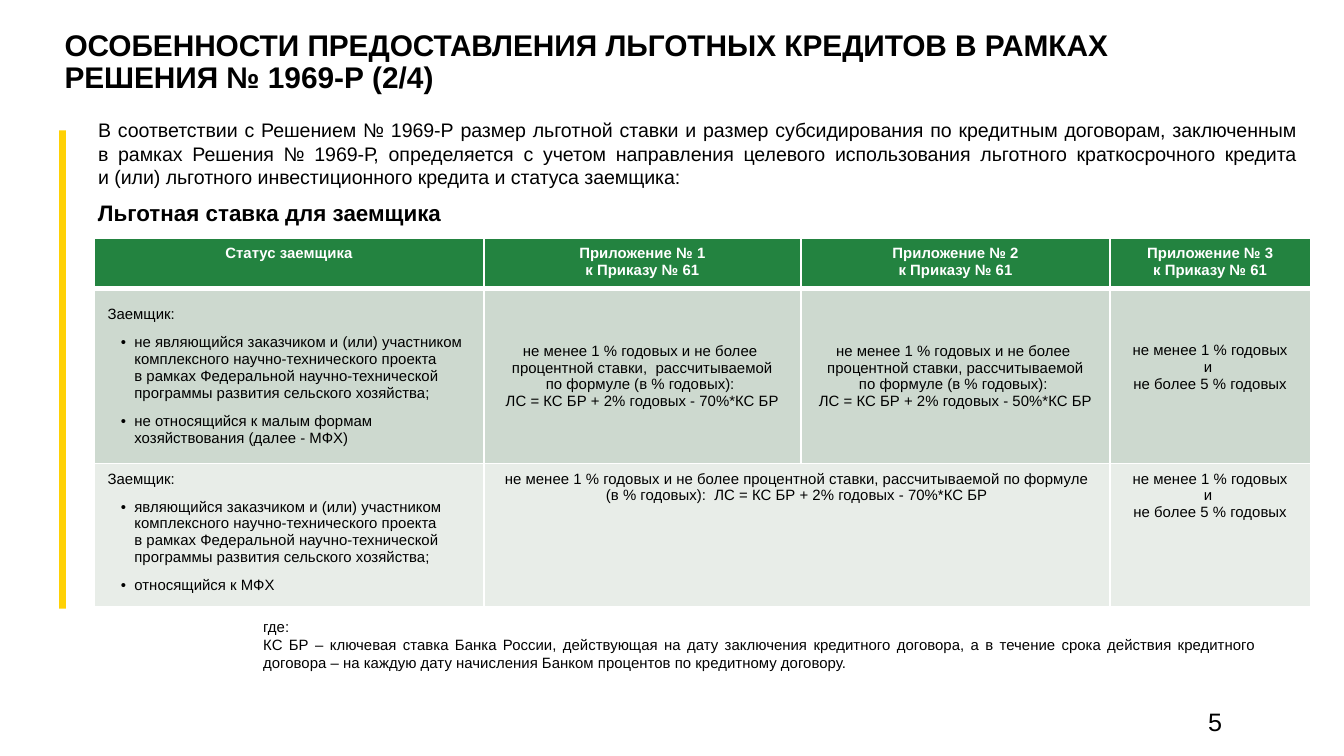
from copy import deepcopy
from dataclasses import dataclass

from lxml.etree import SubElement
from pptx import Presentation
from pptx.dml.color import RGBColor
from pptx.enum.shapes import MSO_SHAPE
from pptx.enum.text import MSO_ANCHOR, MSO_AUTO_SIZE, PP_ALIGN
from pptx.oxml import parse_xml
from pptx.oxml.ns import nsdecls, qn
from pptx.util import Inches, Pt


@dataclass(frozen=True)
class Theme:
    font: str = "Arial"
    black: str = "000000"
    white: str = "FFFFFF"
    gold: str = "FFD105"
    green: str = "238340"
    sage: str = "CDD9CF"
    mist: str = "E8EDE8"
    title: float = 16
    number: float = 13.5
    head: float = 12
    body: float = 10.5
    small: float = 8


theme = Theme()


def write(frame, lines, size=theme.small, color=theme.black, bold=False,
          align=PP_ALIGN.LEFT, anchor=MSO_ANCHOR.TOP, after=0, spacing=1.0):
    frame.word_wrap = True
    frame.vertical_anchor = anchor
    for i, line in enumerate(lines):
        para = frame.paragraphs[0] if i == 0 else frame.add_paragraph()
        para.text = line.removeprefix("• ")
        para.alignment = align
        para.line_spacing = spacing
        para.space_before = Pt(0)
        para.space_after = Pt(after if i < len(lines) - 1 else 0)
        props = para._p.get_or_add_pPr()
        if line.startswith("• "):
            props.set("marL", str(Inches(0.2)))
            props.set("indent", str(Inches(-0.1)))
            SubElement(props, qn("a:buFont")).set("typeface", theme.font)
            SubElement(props, qn("a:buChar")).set("char", "•")
        else:
            props.set("marL", "0")
            props.set("indent", "0")
            SubElement(props, qn("a:buNone"))
        for run in para.runs:
            run.font.name = theme.font
            run.font.size = Pt(size)
            run.font.bold = bold
            run.font.color.rgb = RGBColor.from_string(color)
        for gap in para._p.findall(qn("a:br")):
            gap.append(deepcopy(para.runs[0]._r.rPr))


def place(shape, left, top, width, height):
    shape.left, shape.top = Inches(left), Inches(top)
    shape.width, shape.height = Inches(width), Inches(height)
    return shape


deck = Presentation()
deck.slide_width = Inches(10)
deck.slide_height = Inches(10) * 9 // 16
slide = deck.slides.add_slide(deck.slide_layouts[1])
shapes = slide.shapes

bar = shapes.add_shape(MSO_SHAPE.RECTANGLE, Inches(0.44), Inches(0.97), Inches(0.05), Inches(3.56))
bar.shadow.inherit = False
bar.fill.solid()
bar.fill.fore_color.rgb = RGBColor.from_string(theme.gold)
bar.line.fill.background()

title = place(shapes.title, 0.38, 0.35, 9.31, 0.41).text_frame
title.auto_size = MSO_AUTO_SIZE.NONE
write(title, ["ОСОБЕННОСТИ ПРЕДОСТАВЛЕНИЯ ЛЬГОТНЫХ КРЕДИТОВ В РАМКАХ\nРЕШЕНИЯ № 1969-Р (2/4)"],
      size=theme.title, bold=True, anchor=MSO_ANCHOR.BOTTOM, spacing=0.9)

intro = place(slide.placeholders[1], 0.63, 0.83, 9.13, 0.63).text_frame
intro.auto_size = MSO_AUTO_SIZE.NONE
write(intro, [
    "В соответствии с Решением № 1969-Р размер льготной ставки и размер субсидирования по кредитным договорам, заключенным\n"
    "в рамках Решения № 1969-Р, определяется с учетом направления целевого использования льготного краткосрочного кредита\n"
    "и (или) льготного инвестиционного кредита и статуса заемщика:",
], size=theme.body, align=PP_ALIGN.JUSTIFY)

notes = [
    "где: ",
    "КС БР – ключевая ставка Банка России, действующая на дату заключения кредитного договора, "
    "а в течение срока действия кредитного договора – на каждую дату начисления Банком процентов "
    "по кредитному договору. ",
]
for area, lines, form in [
    ((8.89, 5.21, 0.77, 0.3), ["5"], dict(size=theme.number)),
    ((0.63, 1.43, 7.35, 0.34), ["Льготная ставка для заемщика"],
     dict(size=theme.head, bold=True)),
    ((1.86, 4.55, 7.59, 0.5), notes, dict(align=PP_ALIGN.JUSTIFY)),
]:
    box = shapes.add_textbox(*map(Inches, area))
    write(box.text_frame, lines, **form)

project = ("комплексного научно-технического проекта\nв рамках Федеральной научно-технической "
           "программы развития сельского хозяйства;")
start = "не менее 1 % годовых и не более "
end = "не более 5 % годовых"
rate = "ЛС = КС БР + 2% годовых - "
rows = [
    [["Статус заемщика"],
     ["Приложение № 1\nк Приказу № 61"],
     ["Приложение № 2\nк Приказу № 61"],
     ["Приложение № 3", "к Приказу № 61"]],
    [["Заемщик:", f"• не являющийся заказчиком и (или) участником {project}",
      "• не относящийся к малым формам хозяйствования (далее - МФХ)"],
     [start, "процентной ставки,  рассчитываемой\nпо формуле (в % годовых): ", f"{rate}70%*КС БР"],
     [start, "процентной ставки, рассчитываемой\nпо формуле (в % годовых): ", f"{rate}50%*КС БР"],
     ["не менее 1 % годовых\nи ", end]],
    [["Заемщик:", f"• являющийся заказчиком и (или) участником {project}",
      "• относящийся к МФХ"],
     [f"{start}процентной ставки, рассчитываемой по формуле (в % годовых):  {rate}70%*КС БР"],
     [],
     ["не менее 1 % годовых", "и ", end]],
]
fills = [theme.green, theme.sage, theme.mist]
table = shapes.add_table(3, 4, Inches(0.7), Inches(1.77), Inches(9.05), Inches(2.74)).table
for col, width in zip(table.columns, [2.9, 2.36, 2.3, 1.49]):
    col.width = Inches(width)
for row, height in zip(table.rows, [0.38, 1.3, 1.06]):
    row.height = Inches(height)
table.cell(2, 1).merge(table.cell(2, 2))

for r, row in enumerate(rows):
    for c, lines in enumerate(row):
        cell = table.cell(r, c)
        cell.fill.solid()
        cell.fill.fore_color.rgb = RGBColor.from_string(fills[r])
        for i, side in enumerate("LRTB"):
            thick = (r, side) in [(0, "B"), (1, "T")]
            cell._tc.get_or_add_tcPr().insert(i, parse_xml(
                f'<a:ln{side} {nsdecls("a")} w="{Pt(3 if thick else 1)}"><a:solidFill>'
                f'<a:srgbClr val="{theme.white}"/></a:solidFill></a:ln{side}>'))
        if lines:
            write(cell.text_frame, lines,
                  color=theme.white if r == 0 else theme.black, bold=r == 0,
                  align=PP_ALIGN.LEFT if r and c == 0 else PP_ALIGN.CENTER,
                  after=6 if r and c == 0 else 0)
            cell.vertical_anchor = MSO_ANCHOR.MIDDLE if r == 1 else MSO_ANCHOR.TOP
table.cell(1, 3).margin_bottom = Inches(0.18)

deck.save("out.pptx")
